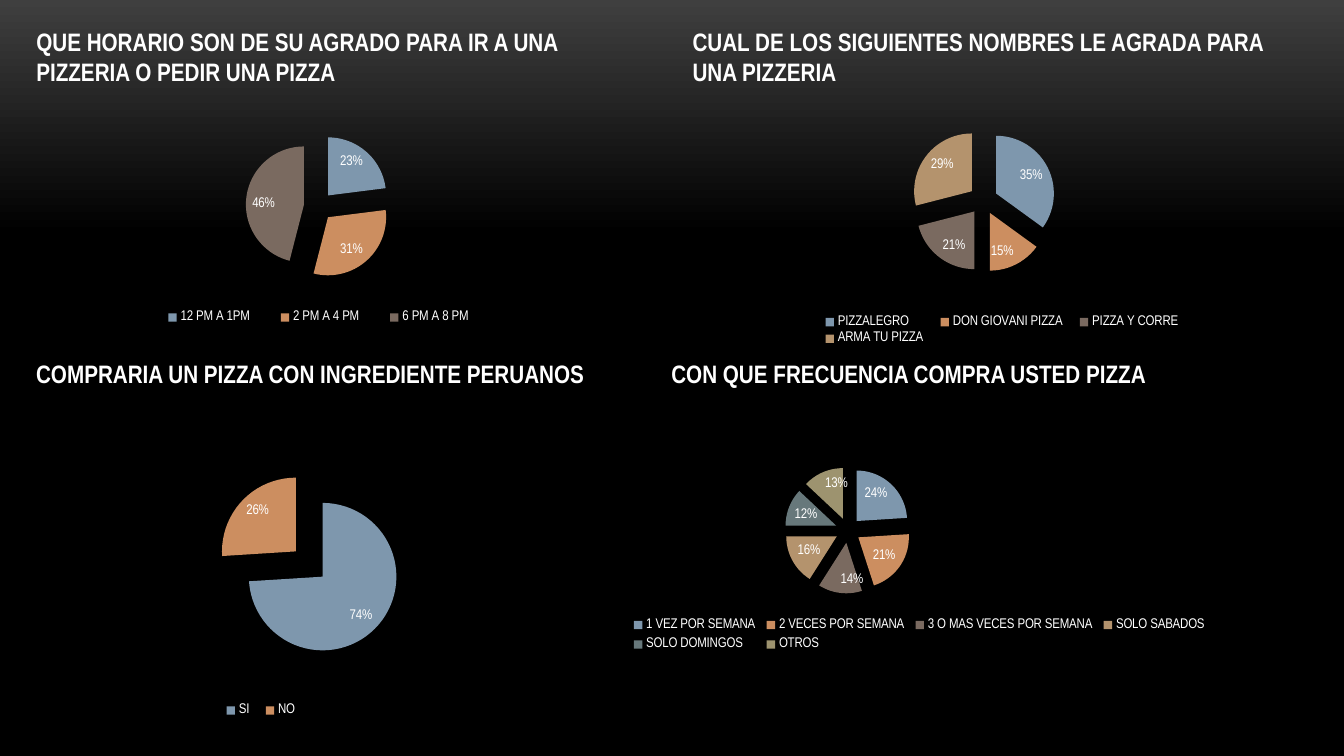
from lxml import etree
from pptx import Presentation
from pptx import util as u
from pptx.chart import data as cd
from pptx.dml.color import RGBColor
from pptx.enum import chart as ce, text as te
from pptx.oxml.ns import qn

COLORS = {
    "white": "FFFFFF", "black": "000000", "gray": "3F3F3F",
    "blue": "7E97AD", "orange": "CC8E60", "brown": "7A6A60",
    "tan": "B4936D", "slate": "67787B", "olive": "9D936F",
}
SLICES = ["blue", "orange", "brown", "tan", "slate", "olive"]
FACE = "Arial Narrow"
HEAD = {"name": FACE, "size": u.Pt(18), "bold": True}
SMALL = {"name": FACE, "size": u.Pt(10), "bold": False}
FRAME = {"word_wrap": True, "auto_size": te.MSO_AUTO_SIZE.NONE,
         "vertical_anchor": te.MSO_ANCHOR.TOP}
LABELS = {"show_percentage": True, "show_value": False,
          "number_format": "0%", "number_format_is_linked": False,
          "position": ce.XL_LABEL_POSITION.INSIDE_END}
LEGEND = {"position": ce.XL_LEGEND_POSITION.BOTTOM,
          "include_in_layout": False}

PANELS = [
    {"head": "QUE HORARIO SON DE SU AGRADO PARA IR A UNA PIZZERIA O PEDIR UNA PIZZA",
     "top": (0.26, 0.21, 5.98, 1.01), "box": (0.26, 1.2, 5.74, 2.12),
     "plot": (0.3, 0.06, 0.41, 0.68), "key": (0.2, 0.87, 0.61, 0.1),
     "data": {"12 PM A 1PM": 23, "2 PM A 4 PM": 31, "6 PM A 8 PM": 46}},
    {"head": "COMPRARIA UN PIZZA CON INGREDIENTE PERUANOS",
     "top": (0.26, 3.51, 6.3, 1.01), "box": (0.58, 4.52, 5.35, 2.69),
     "plot": (0.26, 0.06, 0.41, 0.68), "key": (0.29, 0.9, 0.17, 0.08),
     "data": {"SI": 74, "NO": 26}},
    {"head": "CUAL DE LOS SIGUIENTES NOMBRES LE AGRADA PARA UNA PIZZERIA",
     "top": (6.77, 0.21, 6.19, 0.71), "box": (6.77, 1.2, 6.15, 2.31),
     "plot": (0.3, 0.03, 0.37, 0.62), "key": (0.21, 0.82, 0.61, 0.16),
     "data": {"PIZZALEGRO": 35, "DON GIOVANI PIZZA": 15,
              "PIZZA Y CORRE": 21, "ARMA TU PIZZA": 29}},
    {"head": "CON QUE FRECUENCIA COMPRA USTED PIZZA",
     "top": (6.56, 3.51, 5.77, 0.71), "box": (5.68, 4.52, 6.74, 2.28),
     "plot": (0.24, 0.05, 0.33, 0.55), "key": (0.08, 0.68, 0.86, 0.2),
     "data": {"1 VEZ POR SEMANA": 24, "2 VECES POR SEMANA": 21,
              "3 O MAS VECES POR SEMANA": 14, "SOLO SABADOS": 16,
              "SOLO DOMINGOS": 12, "OTROS": 13}},
]


def tone(name):
    return RGBColor.from_string(COLORS[name])


def apply(item, values):
    for name, value in values.items():
        setattr(item, name, value)


def style(font, values):
    apply(font, values)
    font.color.rgb = tone("white")


def paint(slide):
    fill = slide.background.fill
    fill.gradient()
    fill.gradient_angle = 270
    for stop, name, place in zip(fill.gradient_stops, ("gray", "black"), (0, 0.31)):
        stop.color.rgb = tone(name)
        stop.position = place


def heading(shape, words, area):
    apply(shape, dict(zip(("left", "top", "width", "height"), map(u.Inches, area))))
    frame = shape.text_frame
    apply(frame, FRAME)
    frame.text = words
    para = frame.paragraphs[0]
    apply(para, {"alignment": te.PP_ALIGN.LEFT, "line_spacing": 1.0})
    style(para.font, HEAD)


def arrange(parent, index, area, inner=False):
    for old in parent.findall(qn("c:layout")):
        parent.remove(old)
    layout = etree.Element(qn("c:layout"))
    manual = etree.SubElement(layout, qn("c:manualLayout"))
    parts = [("layoutTarget", "inner")] if inner else []
    parts += [("xMode", "edge"), ("yMode", "edge")]
    parts += zip("xywh", area)
    for tag, value in parts:
        etree.SubElement(manual, qn("c:" + tag), val=str(value))
    parent.insert(index, layout)


def pie(slide, panel):
    data = cd.CategoryChartData()
    data.categories = list(panel["data"])
    data.add_series("Series 1", list(panel["data"].values()))
    chart = slide.shapes.add_chart(
        ce.XL_CHART_TYPE.PIE, *map(u.Inches, panel["box"]), data).chart
    apply(chart, {"has_title": False, "has_legend": True})
    style(chart.font, SMALL)
    apply(chart.legend, LEGEND)
    style(chart.legend.font, SMALL)
    plot = chart.plots[0]
    plot.vary_by_categories = True
    series = plot.series[0]
    burst = etree.Element(qn("c:explosion"), val="25")
    series._element.find(qn("c:cat")).addprevious(burst)
    for index, name in zip(range(len(panel["data"])), SLICES):
        fill = series.points[index].format.fill
        fill.solid()
        fill.fore_color.rgb = tone(name)
    apply(series.data_labels, LABELS)
    style(series.data_labels.font, SMALL)
    area = chart._chartSpace.find(".//" + qn("c:plotArea"))
    arrange(area, 0, panel["plot"], inner=True)
    arrange(chart.legend._element, 1, panel["key"])


def main():
    deck = Presentation()
    apply(deck, {"slide_width": u.Inches(13.33), "slide_height": u.Inches(7.5)})
    slide = deck.slides.add_slide(deck.slide_layouts[5])
    paint(slide)
    for index, panel in enumerate(PANELS):
        area = panel["top"]
        shape = (slide.shapes.add_textbox(*map(u.Inches, area))
                 if index else slide.shapes.title)
        heading(shape, panel["head"], area)
        pie(slide, panel)
    deck.save("out.pptx")


if __name__ == "__main__":
    main()
